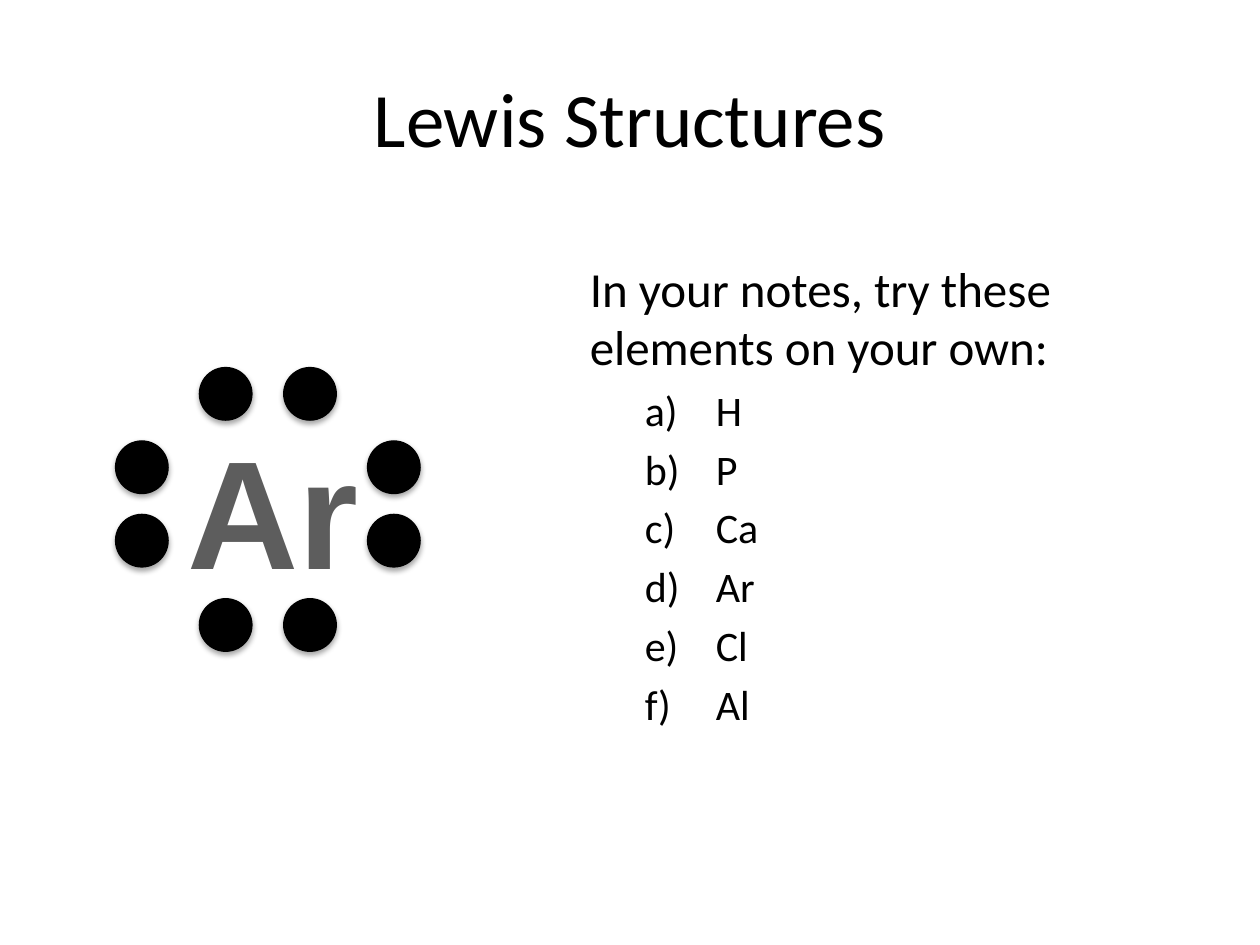
import pptx
import pptx.util
import pptx.dml.color
import pptx.enum.shapes
import pptx.enum.text
import pptx.oxml
import pptx.oxml.ns

Cm, Pt = pptx.util.Cm, pptx.util.Pt
ALIGN = pptx.enum.text.PP_ALIGN
ANCHOR = pptx.enum.text.MSO_ANCHOR

DOT = 1.06
COLS = (2.33, 4.02, 5.72, 7.41)
ROWS = (7.41, 8.89, 10.37, 12.07)
ITEMS = ("H", "P", "Ca", "Ar", "Cl", "Al")
SHADOW = (
    '<a:outerShdw %s blurRad="40000" dist="23000" dir="5400000" rotWithShape="0">'
    '<a:srgbClr val="000000"><a:alpha val="35000"/></a:srgbClr></a:outerShdw>'
    % pptx.oxml.ns.nsdecls("a")
)


def color(code):
    return pptx.dml.color.RGBColor.from_string(code)


def style(par, size, font="Calibri", code="000000", bold=False):
    for run in par.runs:
        run.font.size = Pt(size)
        run.font.name = font
        run.font.bold = bold
        run.font.color.rgb = color(code)


def add_text(slide, left, top, width, height, text, wrap=True):
    box = slide.shapes.add_textbox(Cm(left), Cm(top), Cm(width), Cm(height))
    frame = box.text_frame
    frame.word_wrap = wrap
    frame.text = text
    return frame


def add_dot(slide, left, top):
    dot = slide.shapes.add_shape(
        pptx.enum.shapes.MSO_SHAPE.OVAL, Cm(left), Cm(top), Cm(DOT), Cm(DOT))
    dot.fill.solid()
    dot.fill.fore_color.rgb = color("000000")
    dot.line.color.rgb = color("000000")
    dot.line.width = Pt(0.75)
    # Soft shadow straight below
    dot.shadow.inherit = False
    effect = dot._element.spPr.find(pptx.oxml.ns.qn("a:effectLst"))
    effect.append(pptx.oxml.parse_xml(SHADOW))


def add_item(frame, text):
    par = frame.add_paragraph()
    par.text = text
    par.level = 1
    par.space_before = Pt(4.8)
    style(par, 24)
    # Lettered list with a hanging indent
    props = par._p.get_or_add_pPr()
    props.set("marL", str(Cm(2.54)))
    props.set("indent", str(Cm(-1.43)))
    props.append(pptx.oxml.parse_xml(
        '<a:buFont %s typeface="+mj-lt"/>' % pptx.oxml.ns.nsdecls("a")))
    props.append(pptx.oxml.parse_xml(
        '<a:buAutoNum %s type="alphaLcParenR"/>' % pptx.oxml.ns.nsdecls("a")))


def main():
    deck = pptx.Presentation()
    deck.slide_width, deck.slide_height = Cm(25.4), Cm(19.05)
    slide = deck.slides.add_slide(deck.slide_layouts[6])

    # Title
    title = add_text(slide, 1.27, 0.76, 22.86, 3.18, "Lewis Structures")
    title.vertical_anchor = ANCHOR.MIDDLE
    title.paragraphs[0].alignment = ALIGN.CENTER
    style(title.paragraphs[0], 44)

    # Element symbol
    symbol = add_text(slide, 3.39, 8.26, 4.23, 4.01, "Ar", wrap=False)
    symbol.paragraphs[0].alignment = ALIGN.CENTER
    style(symbol.paragraphs[0], 88, "Arial", "5D5D5D", True)

    # Electron pairs: above and below, then left and right
    for near, far in ((0, 3), (3, 0)):
        for mid in (1, 2):
            add_dot(slide, COLS[mid], ROWS[near])
            add_dot(slide, COLS[far], ROWS[mid])

    # Exercise list
    body = add_text(slide, 11.64, 5.08, 12.28, 12.07,
                    "In your notes, try these elements on your own:")
    body.paragraphs[0].space_before = Pt(5.6)
    style(body.paragraphs[0], 28)
    for item in ITEMS:
        add_item(body, item)

    deck.save("out.pptx")


if __name__ == "__main__":
    main()
